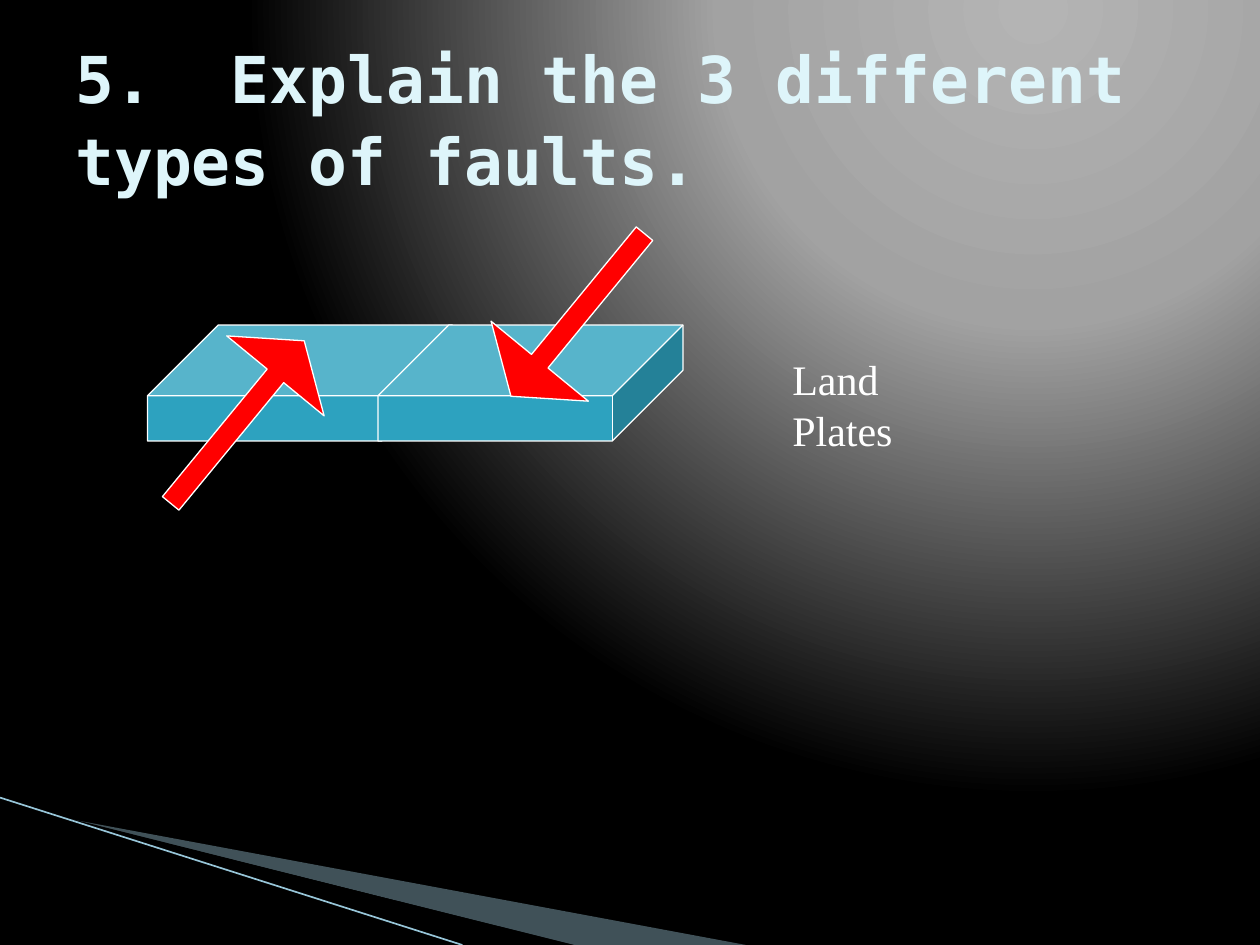
from lxml.etree import SubElement
from pptx import Presentation
from pptx.dml.color import RGBColor
from pptx.enum.shapes import MSO_CONNECTOR, MSO_SHAPE
from pptx.enum.text import MSO_ANCHOR, MSO_AUTO_SIZE
from pptx.oxml import parse_xml
from pptx.oxml.ns import nsdecls, qn
from pptx.util import Inches, Pt

SLIDE_WIDTH, SLIDE_HEIGHT = Inches(10), Inches(7.5)
COLUMN, ROW = SLIDE_WIDTH / 100, SLIDE_HEIGHT / 75

BLACK = RGBColor(0x00, 0x00, 0x00)
WHITE = RGBColor(0xFF, 0xFF, 0xFF)
GLOW = RGBColor(0xB4, 0xB4, 0xB4)
HALO = RGBColor(0xA2, 0xA2, 0xA2)
SWOOSH = RGBColor(0xA0, 0xCB, 0xDC)
SWOOSH_EDGE = RGBColor(0x97, 0xC5, 0xD8)
TITLE_ICE = RGBColor(0xDE, 0xF5, 0xFA)
PLATE_BLUE = RGBColor(0x2D, 0xA2, 0xBF)
FORCE_RED = RGBColor(0xFF, 0x00, 0x00)


def cells(columns, rows):
    """Turn grid columns and rows into slide lengths."""
    return round(columns * COLUMN), round(rows * ROW)


def paint_background(slide):
    """Fill the background with a circular glow from the upper right."""
    slide.background.fill.solid()
    stops = "".join(
        f'<a:gs pos="{share * 1000}"><a:srgbClr val="{color}"/></a:gs>'
        for share, color in ((0, GLOW), (40, HALO), (100, BLACK))
    )
    glow = parse_xml(
        f'<a:gradFill {nsdecls("a")} rotWithShape="1"><a:gsLst>{stops}</a:gsLst>'
        '<a:path path="circle"><a:fillToRect l="65000" t="0" r="0" b="98000"/></a:path>'
        "</a:gradFill>"
    )
    plain = slide.element.find(".//" + qn("a:solidFill"))
    plain.getparent().replace(plain, glow)


def add_wedge(slide, corners, color, opacity=100):
    """Draw a borderless polygon through the given grid corners."""
    start, *others = [cells(*corner) for corner in corners]
    outline = slide.shapes.build_freeform(*start)
    outline.add_line_segments(others, close=True)
    wedge = outline.convert_to_shape()
    wedge.shadow.inherit = False
    wedge.fill.solid()
    wedge.fill.fore_color.rgb = color
    wedge.line.fill.background()
    if opacity < 100:
        tint = wedge.element.spPr.find(".//" + qn("a:srgbClr"))
        SubElement(tint, qn("a:alpha"), val=str(opacity * 1000))


def add_edge(slide, start, end):
    """Draw the thin line beside the swoosh."""
    edge = slide.shapes.add_connector(MSO_CONNECTOR.STRAIGHT, *cells(*start), *cells(*end))
    edge.line.color.rgb = SWOOSH_EDGE
    edge.line.width = Pt(0.95)
    SubElement(edge.element.spPr, qn("a:effectLst"))


def add_solid(slide, preset, corner, size, color, adjustments, rotation=0):
    """Draw a filled preset shape with a fine white outline."""
    solid = slide.shapes.add_shape(preset, *cells(*corner), *cells(*size))
    solid.shadow.inherit = False
    solid.fill.solid()
    solid.fill.fore_color.rgb = color
    solid.line.color.rgb = WHITE
    solid.line.width = Pt(0.75)
    solid.rotation = rotation
    for index, share in enumerate(adjustments):
        solid.adjustments[index] = share


def add_plate(slide, left):
    """Draw one land plate as a flat block."""
    add_solid(slide, MSO_SHAPE.CUBE, (left, 25.8), (24.2, 9.2), PLATE_BLUE, [0.61])


def add_force(slide, corner, rotation):
    """Draw one red arrow pushing on a plate."""
    add_solid(slide, MSO_SHAPE.RIGHT_ARROW, corner, (16.7, 10), FORCE_RED,
              [0.17, 0.36], rotation)


def add_text(slide, corner, size, words, face, points, color, bold=False):
    """Place one styled line of text and return its text frame."""
    frame = slide.shapes.add_textbox(*cells(*corner), *cells(*size)).text_frame
    frame.text = words
    font = frame.paragraphs[0].runs[0].font
    font.name, font.size, font.bold = face, Pt(points), bold
    font.color.rgb = color
    return frame


def main():
    """Build the fault question slide."""
    deck = Presentation()
    deck.slide_width, deck.slide_height = SLIDE_WIDTH, SLIDE_HEIGHT
    slide = deck.slides.add_slide(deck.slide_layouts[6])

    paint_background(slide)
    add_wedge(slide, [(5.5, 65), (59.2, 75), (45.6, 75)], SWOOSH, opacity=40)
    add_wedge(slide, [(5.3, 64.9), (45.4, 75), (37.2, 75)], BLACK)
    add_edge(slide, (0, 63.3), (36.7, 75))

    title = add_text(slide, (5, 3), (90, 12.5), "5.  Explain the 3 different types of faults.",
                     "DejaVu Sans Mono", 36.9, TITLE_ICE, bold=True)
    title.word_wrap = True
    title.vertical_anchor = MSO_ANCHOR.MIDDLE
    title.paragraphs[0].line_spacing = 1.05

    for left in (11.7, 30):
        add_plate(slide, left)
    add_force(slide, (10.5, 28.5), 309.4)
    label = add_text(slide, (61.9, 27.6), (17.6, 5), "Land Plates",
                     "Times New Roman", 24, WHITE)
    label.word_wrap = False
    label.auto_size = MSO_AUTO_SIZE.SHAPE_TO_FIT_TEXT
    add_force(slide, (37.5, 20), 129.4)

    deck.save("out.pptx")


if __name__ == "__main__":
    main()
